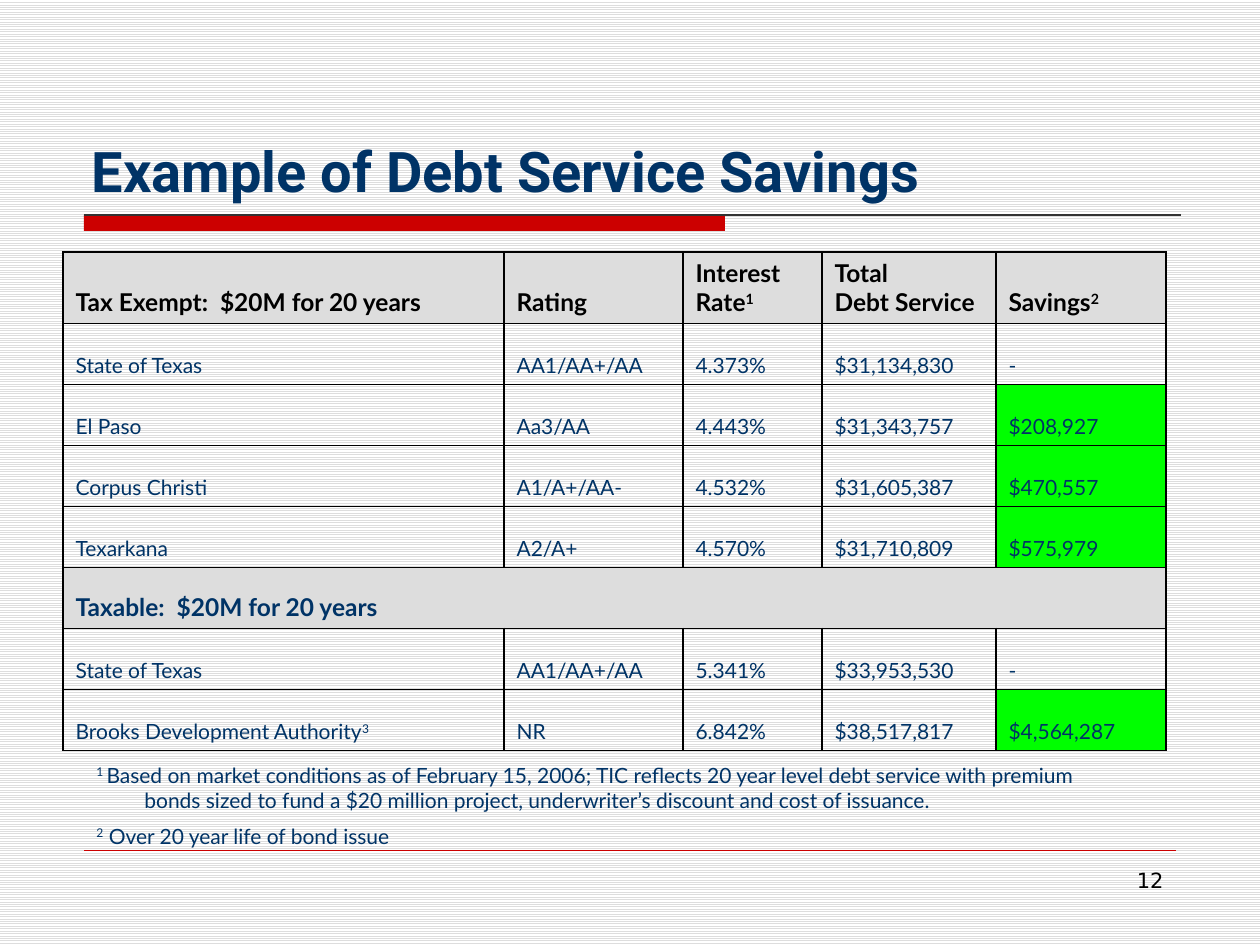
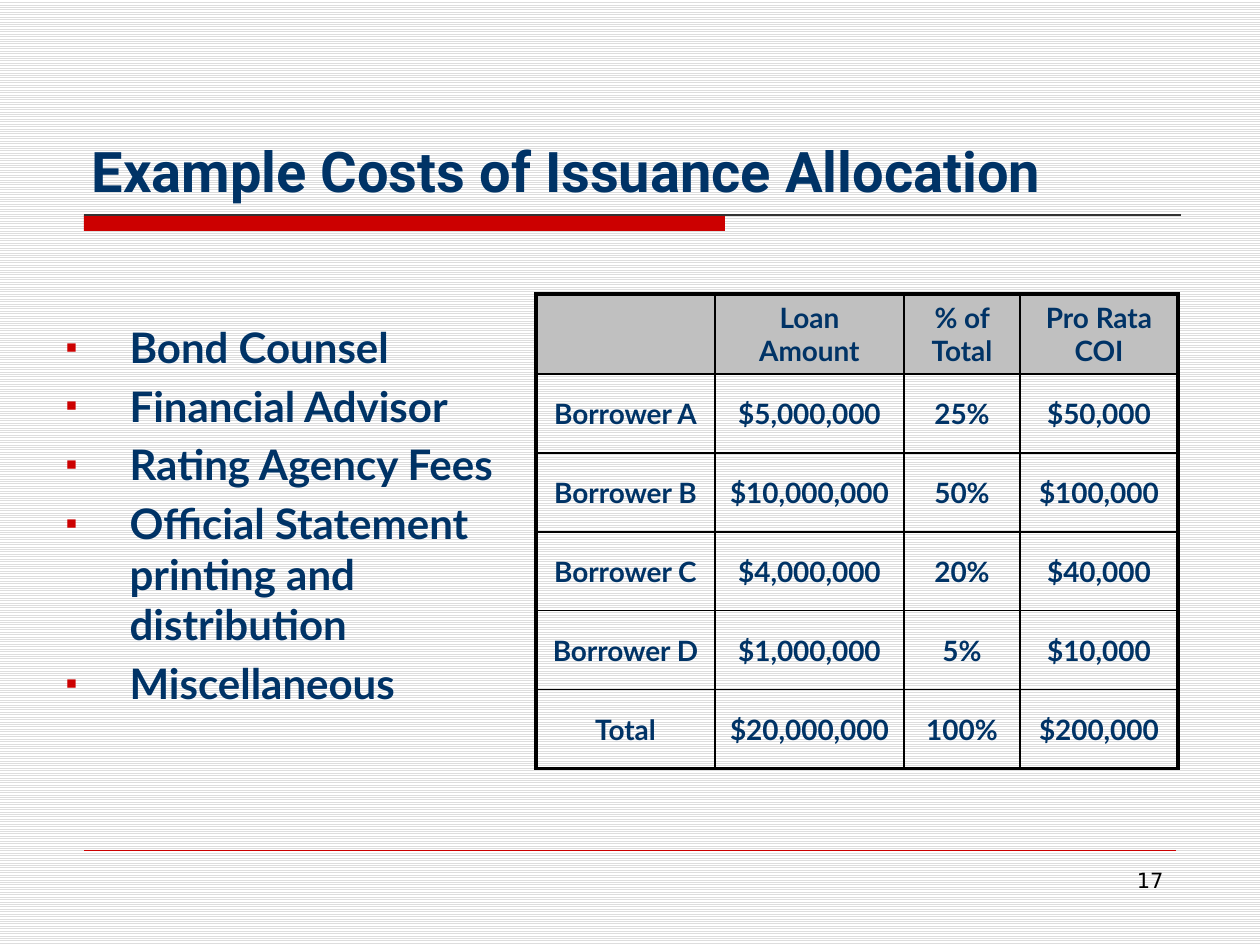
from dataclasses import dataclass

from lxml.etree import SubElement, fromstring
from pptx import Presentation
from pptx.dml.color import RGBColor
from pptx.enum.dml import MSO_PATTERN
from pptx.enum.shapes import MSO_CONNECTOR, MSO_SHAPE
from pptx.enum.text import MSO_ANCHOR as ANCHOR, MSO_AUTO_SIZE, PP_ALIGN as ALIGN
from pptx.oxml.ns import nsdecls, qn
from pptx.util import Pt


@dataclass(frozen=True)
class Theme:
    navy: str = "003366"
    red: str = "CC0000"
    black: str = "000000"
    white: str = "FFFFFF"
    rule: str = "333333"
    pale: str = "DDDDDD"
    silver: str = "C0C0C0"
    green: str = "00FF00"
    title_font: str = "Roboto"
    text_font: str = "Lato"
    number_font: str = "DejaVu Sans"
    title_size: int = 32
    list_size: int = 24
    loan_size: int = 16
    heading_size: int = 14
    small_size: int = 12


THEME = Theme()
EMU_PER_PX = 914400 / 126


def px(*lengths):
    """Turn pixel lengths into a list of EMU."""
    return [round(length * EMU_PER_PX) for length in lengths]


def write(frame, text, font=THEME.text_font, size=THEME.small_size, color=THEME.navy,
          bold=False, align=ALIGN.LEFT, anchor=ANCHOR.TOP, before=0, hang=0):
    """Fill a text frame; newlines part paragraphs, ^ marks enclose superscripts."""
    frame.word_wrap = True
    frame.vertical_anchor = anchor
    for number, line in enumerate(text.split("\n")):
        paragraph = frame.add_paragraph() if number else frame.paragraphs[0]
        paragraph.alignment = align
        paragraph.space_before = Pt(before)
        props = paragraph._p.get_or_add_pPr()
        props.set("marL", str(px(hang)[0]))
        props.set("indent", str(px(-hang)[0]))
        for part, words in enumerate(line.split("^")):
            if not words:
                continue
            run = paragraph.add_run()
            run.text = words
            run.font.name, run.font.size, run.font.bold = font, Pt(size), bold
            run.font.color.rgb = RGBColor.from_string(color)
            if part % 2:
                run._r.get_or_add_rPr().set("baseline", "30000")


prs = Presentation()
prs.slide_width, prs.slide_height = px(1260, 945)

stripes = prs.slide_master.background.fill
stripes.patterned()
stripes.pattern = MSO_PATTERN.LIGHT_HORIZONTAL
stripes.fore_color.rgb = RGBColor.from_string(THEME.pale)
stripes.back_color.rgb = RGBColor.from_string(THEME.white)

# Title, band, rules and page number of each slide
TITLE_ONLY, TITLE_AND_BODY = prs.slide_layouts[5], prs.slide_layouts[1]
slides = []
for layout, heading, page in [
    (TITLE_ONLY, "Example of Debt Service Savings", "12"),
    (TITLE_AND_BODY, "Example Costs of Issuance Allocation", "17"),
]:
    slide = prs.slides.add_slide(layout)
    slides.append(slide)

    title = slide.shapes.title
    title.left, title.top, title.width, title.height = px(79, 42, 1103, 168)
    title.text_frame.auto_size = MSO_AUTO_SIZE.NONE
    write(title.text_frame, heading, font=THEME.title_font, size=THEME.title_size,
          bold=True, anchor=ANCHOR.BOTTOM)

    band = slide.shapes.add_shape(MSO_SHAPE.RECTANGLE, *px(84, 215, 641, 16))
    band.shadow.inherit = False
    band.fill.solid()
    band.fill.fore_color.rgb = RGBColor.from_string(THEME.red)
    band.line.fill.background()

    for right, y, color, weight in [(1181, 215, THEME.rule, 0.75),
                                    (1176, 850, THEME.red, 0.25)]:
        rule = slide.shapes.add_connector(MSO_CONNECTOR.STRAIGHT, *px(84, y, right, y))
        rule.line.color.rgb = RGBColor.from_string(color)
        rule.line.width = Pt(weight)
        SubElement(rule._element.spPr, qn("a:effectLst"))

    page_number = slide.shapes.add_textbox(*px(903, 861, 273, 66))
    write(page_number.text_frame, page, font=THEME.number_font, color=THEME.black,
          align=ALIGN.RIGHT)

savings_slide, costs_slide = slides

# Debt service savings
savings_rows = [
    ["Tax Exempt:  $20M for 20 years", "Rating", "Interest\nRate^1^",
     "Total\nDebt Service", "Savings^2^"],
    ["State of Texas", "AA1/AA+/AA", "4.373%", "$31,134,830", "-"],
    ["El Paso", "Aa3/AA", "4.443%", "$31,343,757", "$208,927"],
    ["Corpus Christi", "A1/A+/AA-", "4.532%", "$31,605,387", "$470,557"],
    ["Texarkana", "A2/A+", "4.570%", "$31,710,809", "$575,979"],
    ["Taxable:  $20M for 20 years", "", "", "", ""],
    ["State of Texas", "AA1/AA+/AA", "5.341%", "$33,953,530", "-"],
    ["Brooks Development Authority^3^", "NR", "6.842%", "$38,517,817", "$4,564,287"],
]
TAXABLE_ROW, SAVINGS_COLUMN = 5, 4
savings = savings_slide.shapes.add_table(8, 5, *px(63, 252, 1103, 498)).table
for column, width in zip(savings.columns, px(441, 179, 139, 174, 170)):
    column.width = width
for row, height in zip(savings.rows, px(71, *[61] * 7)):
    row.height = height
savings.cell(TAXABLE_ROW, 0).merge(savings.cell(TAXABLE_ROW, SAVINGS_COLUMN))
for r, entries in enumerate(savings_rows):
    is_heading = r in (0, TAXABLE_ROW)
    for c, entry in enumerate(entries):
        cell = savings.cell(r, c)
        cell.vertical_anchor = ANCHOR.BOTTOM
        if entry:
            write(cell.text_frame, entry, bold=is_heading, hang=64, anchor=None,
                  size=THEME.heading_size if is_heading else THEME.small_size,
                  color=THEME.black if r == 0 else THEME.navy)
        is_saving = c == SAVINGS_COLUMN and entry.startswith("$")
        if is_heading or is_saving:
            cell.fill.solid()
            cell.fill.fore_color.rgb = RGBColor.from_string(
                THEME.pale if is_heading else THEME.green)
        else:
            cell.fill.background()

footnotes = savings_slide.shapes.add_textbox(*px(84, 756, 1029, 101))
write(footnotes.text_frame,
      "^1 ^Based on market conditions as of February 15, 2006; TIC reflects 20 year level "
      "debt service with premium bonds sized to fund a $20 million project, underwriter’s "
      "discount and cost of issuance.\n"
      "^2^ Over 20 year life of bond issue", before=6, hang=48)

# Costs of issuance
costs = costs_slide.placeholders[1]
costs.left, costs.top, costs.width, costs.height = px(53, 315, 462, 588)
costs.text_frame.auto_size = MSO_AUTO_SIZE.NONE
write(costs.text_frame,
      "Bond Counsel\nFinancial Advisor\nRating Agency Fees\n"
      "Official Statement printing and distribution\nMiscellaneous",
      size=THEME.list_size, bold=True, before=4.8, hang=64)
for paragraph in costs.text_frame.paragraphs:
    props = paragraph._p.get_or_add_pPr()
    SubElement(SubElement(props, qn("a:buClr")), qn("a:srgbClr"), val=THEME.red)
    SubElement(props, qn("a:buSzPct"), val="80000")
    SubElement(props, qn("a:buChar"), char="▪")

loan_rows = [
    ["", "Loan Amount", "% of Total", "Pro Rata COI"],
    ["Borrower A", "$5,000,000", "25%", "$50,000"],
    ["Borrower B", "$10,000,000", "50%", "$100,000"],
    ["Borrower C", "$4,000,000", "20%", "$40,000"],
    ["Borrower D", "$1,000,000", "5%", "$10,000"],
    ["Total", "$20,000,000", "100%", "$200,000"],
]
loans = costs_slide.shapes.add_table(6, 4, *px(536, 294, 642, 474)).table
for column, width in zip(loans.columns, px(179, 189, 116, 158)):
    column.width = width
for row in loans.rows:
    row.height = px(79)[0]
for r, entries in enumerate(loan_rows):
    for c, entry in enumerate(entries):
        cell = loans.cell(r, c)
        cell.vertical_anchor = ANCHOR.MIDDLE
        if entry:
            write(cell.text_frame, entry, size=THEME.loan_size, bold=True,
                  align=ALIGN.CENTER, anchor=None, before=3.2)
        if r == 0:
            cell.fill.solid()
            cell.fill.fore_color.rgb = RGBColor.from_string(THEME.silver)
        else:
            cell.fill.background()

# Cell borders, with a weight of their own for the outer frame
for table, frame_weight in [(savings, 1), (loans, 2.25)]:
    table.first_row = table.horz_banding = False
    last_row, last_column = len(table.rows) - 1, len(table.columns) - 1
    for r in range(last_row + 1):
        for c in range(last_column + 1):
            outer_sides = {"L": c == 0, "R": c == last_column,
                           "T": r == 0, "B": r == last_row}
            cell_props = table.cell(r, c)._tc.get_or_add_tcPr()
            for place, (side, is_outer) in enumerate(outer_sides.items()):
                weight = Pt(frame_weight if is_outer else 1)
                cell_props.insert(place, fromstring(
                    f'<a:ln{side} {nsdecls("a")} w="{weight}"><a:solidFill>'
                    f'<a:srgbClr val="{THEME.black}"/></a:solidFill></a:ln{side}>'))

prs.save("out.pptx")
